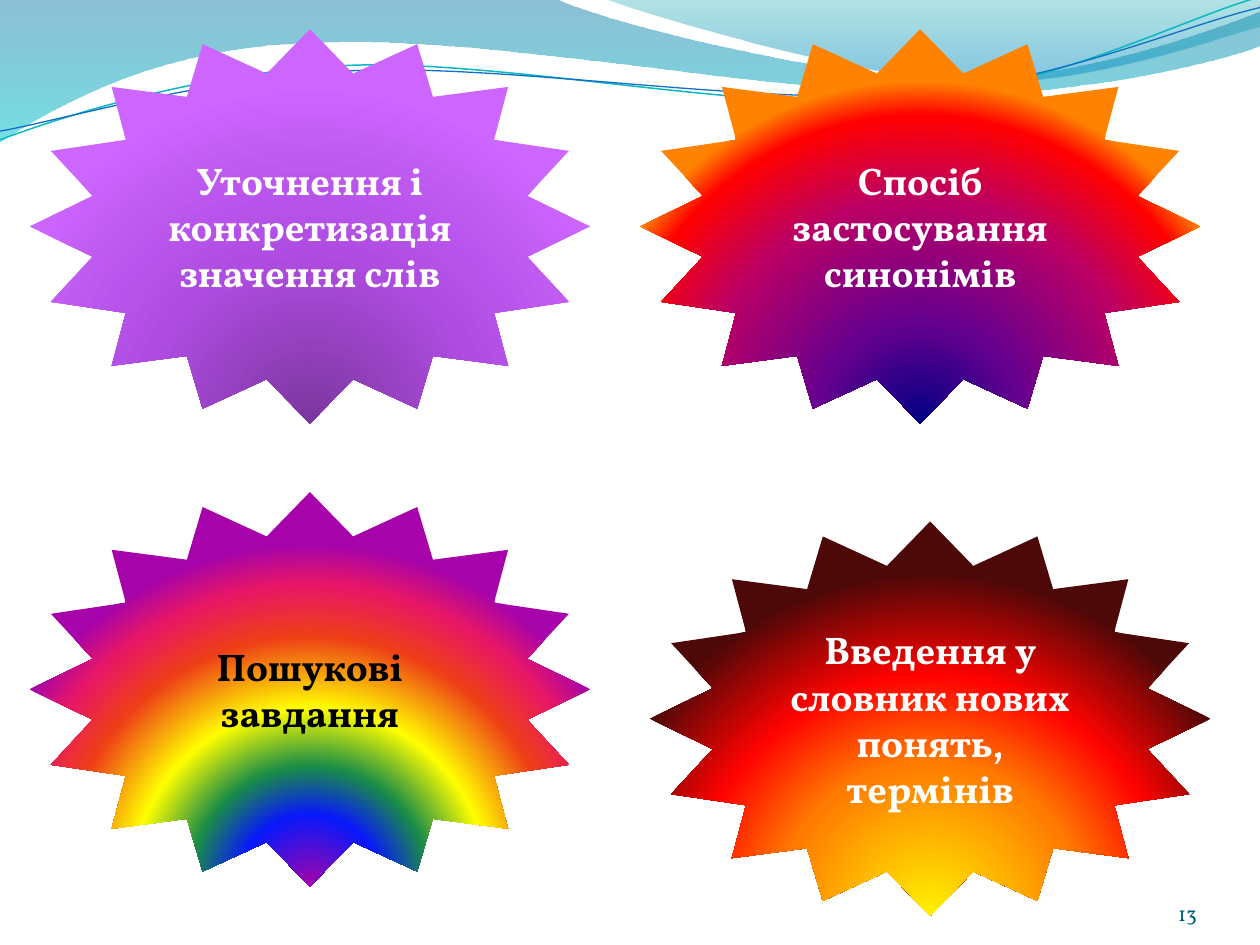
import pptx
import pptx.dml.color
import pptx.enum.shapes
import pptx.enum.text
import pptx.oxml
import pptx.oxml.ns
import pptx.util

Pt = pptx.util.Pt
RGBColor = pptx.dml.color.RGBColor
ALIGN = pptx.enum.text.PP_ALIGN
ANCHOR = pptx.enum.text.MSO_ANCHOR

WHITE = RGBColor(0xFF, 0xFF, 0xFF)
BLACK = RGBColor(0x00, 0x00, 0x00)
NUMBER_TEAL = RGBColor(0x04, 0x5D, 0x75)
LINE_TEAL = RGBColor(0x0A, 0xB8, 0xBF)
LINE_BLUE = RGBColor(0x0F, 0x6F, 0xC6)
WAVE_BLUE = RGBColor(0x00, 0x74, 0xA1)
WAVE_CYAN = RGBColor(0x00, 0xC6, 0xCF)
CREST_TEAL = RGBColor(0x00, 0xA1, 0xA9)
CREST_BLUE = RGBColor(0x00, 0x8B, 0xBF)
PLUM = RGBColor(0x7B, 0x36, 0x9E)
VIOLET = RGBColor(0xAF, 0x4C, 0xE1)
LILAC = RGBColor(0xCC, 0x66, 0xFF)
NAVY = RGBColor(0x00, 0x00, 0x82)
INDIGO = RGBColor(0x66, 0x00, 0x8F)
CRIMSON = RGBColor(0xBA, 0x00, 0x66)
RED = RGBColor(0xFF, 0x00, 0x00)
ORANGE = RGBColor(0xFF, 0x82, 0x00)
LEMON = RGBColor(0xFF, 0xF2, 0x00)
AMBER = RGBColor(0xFF, 0x7A, 0x00)
SCARLET = RGBColor(0xFF, 0x03, 0x00)
MAROON = RGBColor(0x4D, 0x08, 0x08)
MAGENTA = RGBColor(0xA6, 0x03, 0xAB)
BLUE = RGBColor(0x08, 0x19, 0xFB)
GREEN = RGBColor(0x1A, 0x8D, 0x48)
YELLOW = RGBColor(0xFF, 0xFF, 0x00)
VERMILION = RGBColor(0xEE, 0x3F, 0x17)
PINK = RGBColor(0xE8, 0x17, 0x66)

FONT = "Vollkorn"
STAR_SIZE = (320.4, 225.4)
DOWNWARD = '<a:lin ang="5400000" scaled="0"/>'
FROM_BOTTOM = (
    '<a:path path="circle">'
    '<a:fillToRect l="50000" t="100000" r="50000" b="0"/></a:path>'
)

WAVES = [
    ((0, -0.7),
     [(317.5, -0.7), (342.7, 12.2, 478, 45.4, 545.8, 45.4),
      (614.2, 45.4, 689.8, 18.7, 720, 6.5),
      (720.7, 25.9), (707.8, 31.7, 626.4, 54.7, 537.1, 54),
      (447.8, 54, 275, 20.2, 185, 24.5), (92.9, 25.2, 33.1, 59.8, -0.7, 81.4)],
     [(0, WAVE_BLUE, 45), (100, WAVE_CYAN, 55)]),
    ((345.3, -0.7),
     [(366.5, 7.9, 491, 44.6, 553.7, 46.8), (616.3, 49.7, 691.9, 23, 720, 15.1),
      (720, 0)],
     [(0, CREST_TEAL, 30), (80, CREST_BLUE, 45)]),
]
STRANDS = [
    ((0, 79.9),
     [(34.6, 67, 113.8, 41, 199.4, 37.4), (284.4, 33.8, 427, 64.1, 513.4, 57.6),
      (599.8, 51.1, 675.4, 10.8, 718.6, -1.4)], LINE_TEAL, 0.85),
    ((0, 74.9),
     [(33.8, 69.1, 118.1, 43.9, 203.8, 40.3), (290.2, 36.7, 429.8, 59.8, 516.2, 54),
      (601.9, 48.2, 673.9, 15.1, 720, 4.3)], LINE_BLUE, 0.75),
]
STARS = [
    (16.9, 16.7, "Уточнення і конкретизація значення слів", WHITE,
     [(0, PLUM), (50, VIOLET), (100, LILAC)]),
    (365.6, 16.7, "Спосіб застосування синонімів", WHITE,
     [(0, NAVY), (30, INDIGO), (65, CRIMSON), (90, RED), (100, ORANGE)]),
    (371.3, 298, "Введення у словник нових понять, термінів", WHITE,
     [(0, LEMON), (45, AMBER), (70, SCARLET), (100, MAROON)]),
    (16.9, 281.2, "Пошукові завдання", BLACK,
     [(0, MAGENTA), (21, BLUE), (35, GREEN), (52, YELLOW), (73, VERMILION),
      (88, PINK), (100, MAGENTA)]),
]


def fill_gradient(shape, stops, direction):
    """Fill a shape with (position, colour, optional opacity) stops."""
    stop_xml = "".join(
        f'<a:gs pos="{position * 1000}"><a:srgbClr val="{color}">'
        + "".join(f'<a:alpha val="{percent * 1000}"/>' for percent in opacity)
        + "</a:srgbClr></a:gs>"
        for position, color, *opacity in stops
    )
    shape.fill.background()
    properties = shape.element.spPr
    empty_fill = properties.find(pptx.oxml.ns.qn("a:noFill"))
    gradient = pptx.oxml.parse_xml(
        f'<a:gradFill {pptx.oxml.ns.nsdecls("a")} rotWithShape="1">'
        f"<a:gsLst>{stop_xml}</a:gsLst>{direction}</a:gradFill>"
    )
    properties.replace(empty_fill, gradient)


def add_outline(page, box, start, segments, close):
    """Draw straight and cubic segments placed relative to the box."""
    left, top = box[:2]
    ends = [(Pt(left + x), Pt(top + y)) for *_, x, y in segments]
    builder = page.shapes.build_freeform(Pt(left + start[0]), Pt(top + start[1]))
    builder.add_line_segments(ends, close=close)
    shape = builder.convert_to_shape()
    shape.shadow.inherit = False
    lines = list(shape.element.iter(pptx.oxml.ns.qn("a:lnTo")))
    for line, segment in zip(lines, segments):
        if len(segment) == 6:
            points = "".join(
                f'<a:pt x="{Pt(left + x) - shape.left}" y="{Pt(top + y) - shape.top}"/>'
                for x, y in zip(segment[::2], segment[1::2])
            )
            curve = pptx.oxml.parse_xml(
                f'<a:cubicBezTo {pptx.oxml.ns.nsdecls("a")}>{points}</a:cubicBezTo>'
            )
            line.getparent().replace(line, curve)
    return shape


def add_header(page, box):
    """Draw the waves and thin strands along the top of the box."""
    for start, segments, stops in WAVES:
        wave = add_outline(page, box, start, segments, True)
        fill_gradient(wave, stops, DOWNWARD)
        wave.line.fill.background()
    for start, segments, color, width in STRANDS:
        strand = add_outline(page, box, start, segments, False)
        strand.fill.background()
        strand.line.color.rgb = color
        strand.line.width = Pt(width)


def write_text(frame, text, size, color, alignment, bold):
    """Write one formatted paragraph into a text frame."""
    frame.text = text
    frame.word_wrap = True
    para = frame.paragraphs[0]
    para.alignment = alignment
    font = para.runs[0].font
    font.name, font.size, font.bold = FONT, Pt(size), bold
    font.color.rgb = color


def add_star(page, box, text, color, stops):
    """Draw a sixteen-point star with centred text in the box."""
    kind = pptx.enum.shapes.MSO_SHAPE.STAR_16_POINT
    star = page.shapes.add_shape(kind, *map(Pt, box))
    star.adjustments[0] = 0.395
    star.shadow.inherit = False
    star.line.fill.background()
    fill_gradient(star, stops, FROM_BOTTOM)
    star.text_frame.vertical_anchor = ANCHOR.MIDDLE
    write_text(star.text_frame, text, 22, color, ALIGN.CENTER, True)


def add_page_number(page, box, number):
    """Write the page number at the lower right of the box."""
    frame = page.shapes.add_textbox(*map(Pt, box)).text_frame
    frame.margin_left = frame.margin_right = Pt(0)
    frame.margin_top = frame.margin_bottom = Pt(0)
    frame.vertical_anchor = ANCHOR.BOTTOM
    write_text(frame, number, 12, NUMBER_TEAL, ALIGN.RIGHT, False)


def main():
    """Build and save the deck."""
    deck = pptx.Presentation()
    deck.slide_width, deck.slide_height = Pt(720), Pt(540)
    page = deck.slides.add_slide(deck.slide_layouts[6])
    add_header(page, (0, 0, 720, 82))
    add_page_number(page, (624.2, 500.4, 59.8, 28.8), "13")
    for left, top, text, color, stops in STARS:
        add_star(page, (left, top, *STAR_SIZE), text, color, stops)
    deck.save("out.pptx")


if __name__ == "__main__":
    main()
